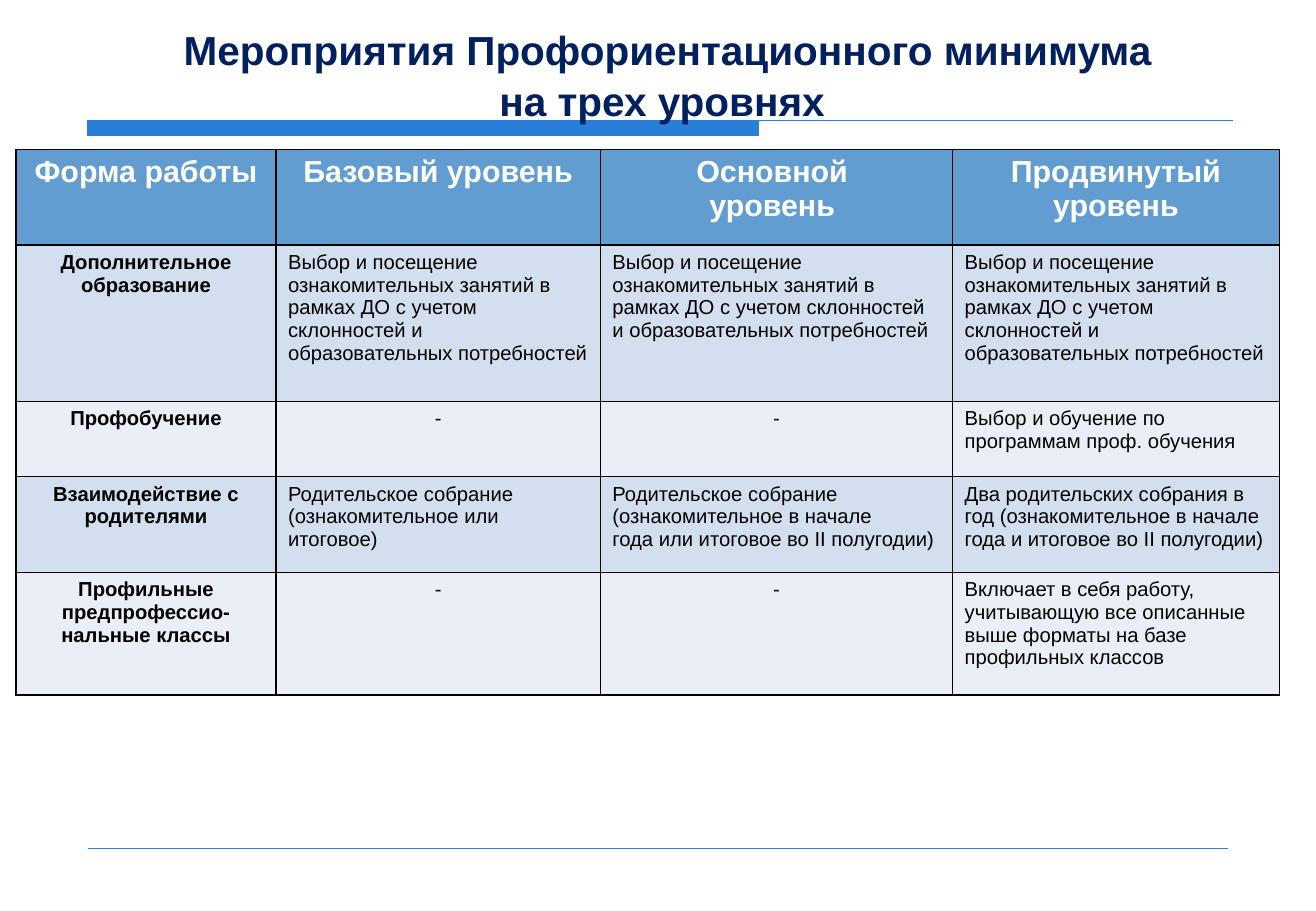
from lxml import etree
from pptx import Presentation
from pptx.dml.color import RGBColor
from pptx.enum.shapes import MSO_CONNECTOR as Connector
from pptx.enum.text import PP_ALIGN as Align
from pptx.oxml.ns import qn
from pptx.util import Pt

BLUE, NAVY, BLACK, WHITE = "297FD5", "002060", "000000", "FFFFFF"
HEADER_FILL, BAND_FILLS = "629DD1", ("D3DFEE", "EAEFF7")
COLUMN_WIDTHS = (154.1, 192.2, 208.8, 193.7)
ROW_HEIGHTS = (56.7, 92.8, 44.6, 56.8, 72.7)
TITLE = ["Мероприятия Профориентационного минимума", "на трех уровнях "]
CHOICE = ["Выбор и посещение ознакомительных занятий в рамках ДО с учетом "
          "склонностей и образовательных потребностей"]
ROWS = (
    (["Форма работы"], ["Базовый уровень"], ["Основной ", "уровень "],
     ["Продвинутый уровень"]),
    (["Дополнительное образование"], CHOICE, CHOICE, CHOICE),
    (["Профобучение"], ["-"], ["-"],
     ["Выбор и обучение по программам проф. обучения"]),
    (["Взаимодействие с", "родителями"],
     ["Родительское собрание", "(ознакомительное или", "итоговое)"],
     ["Родительское собрание", "(ознакомительное в начале",
      "года или итоговое во II полугодии)"],
     ["Два родительских собрания в год (ознакомительное в начале года "
      "и итоговое во II полугодии)"]),
    (["Профильные", "предпрофессио-нальные классы"], ["-"], ["-"],
     ["Включает в себя работу,",
      "учитывающую все описанные выше форматы на базе профильных классов"]),
)


def color(value):
    return RGBColor.from_string(value)


def write(frame, lines, font_color, alignment=Align.CENTER, spacing=1.0, **font):
    frame.word_wrap = True
    for index, line in enumerate(lines):
        paragraph = frame.add_paragraph() if index else frame.paragraphs[0]
        paragraph.alignment = alignment
        paragraph.line_spacing = spacing
        run = paragraph.add_run()
        run.text = line
        run.font.color.rgb = color(font_color)
        for name, value in {"name": "Arial", **font}.items():
            setattr(run.font, name, value)


def add_title(slide, left, top, width, height):
    box = slide.shapes.add_textbox(Pt(left), Pt(top), Pt(width), Pt(height))
    write(box.text_frame, TITLE, NAVY, spacing=1.05, size=Pt(24), bold=True)


def add_title_rule(slide, left, top, width, height):
    bar_right, bottom = left + 397.5, top + height
    builder = slide.shapes.build_freeform(Pt(left), Pt(top))
    corners = ((bar_right, top), (bar_right, bottom), (left, bottom))
    builder.add_line_segments([(Pt(x), Pt(y)) for x, y in corners], close=True)
    builder.move_to(Pt(left), Pt(top))
    builder.add_line_segments([(Pt(left + width), Pt(top))], close=False)
    rule = builder.convert_to_shape()
    rule.shadow.inherit = False
    rule.fill.solid()
    rule.fill.fore_color.rgb = color(BLUE)
    rule.line.color.rgb = color(BLUE)
    rule.line.width = Pt(0.75)


def add_footer_line(slide, left, top, width):
    line = slide.shapes.add_connector(
        Connector.STRAIGHT, Pt(left), Pt(top), Pt(left + width), Pt(top))
    line.line.color.rgb = color(BLUE)
    line.line.width = Pt(0.25)
    etree.SubElement(line._element.spPr, qn("a:effectLst"))


def add_borders(cell):
    properties = cell._tc.get_or_add_tcPr()
    for index, side in enumerate(("lnL", "lnR", "lnT", "lnB")):
        border = etree.Element(qn(f"a:{side}"), w=str(Pt(1)))
        fill = etree.SubElement(border, qn("a:solidFill"))
        etree.SubElement(fill, qn("a:srgbClr"), val=BLACK)
        properties.insert(index, border)


def add_levels_table(slide, left, top):
    table = slide.shapes.add_table(
        len(ROWS), len(COLUMN_WIDTHS), Pt(left), Pt(top),
        Pt(sum(COLUMN_WIDTHS)), Pt(sum(ROW_HEIGHTS))).table
    for column, width in zip(table.columns, COLUMN_WIDTHS):
        column.width = Pt(width)
    for row, height in zip(table.rows, ROW_HEIGHTS):
        row.height = Pt(height)
    for row_index, row in enumerate(ROWS):
        header = row_index == 0
        for column_index, lines in enumerate(row):
            cell = table.cell(row_index, column_index)
            cell.fill.solid()
            cell.fill.fore_color.rgb = color(
                HEADER_FILL if header else BAND_FILLS[(row_index - 1) % 2])
            label = header or column_index == 0
            centered = label or lines == ["-"]
            write(cell.text_frame, lines, WHITE if header else BLACK,
                  Align.CENTER if centered else Align.LEFT,
                  size=Pt(18 if header else 12), bold=label)
            add_borders(cell)


def main():
    presentation = Presentation()
    presentation.slide_width, presentation.slide_height = Pt(780), Pt(540)
    slide = presentation.slides.add_slide(presentation.slide_layouts[6])
    add_title_rule(slide, 52, 71.4, 679, 8.7)
    add_footer_line(slide, 52, 502.5, 676)
    add_title(slide, 52, 10, 687.5, 65.5)
    add_levels_table(slide, 9.5, 88.5)
    presentation.save("out.pptx")


if __name__ == "__main__":
    main()
